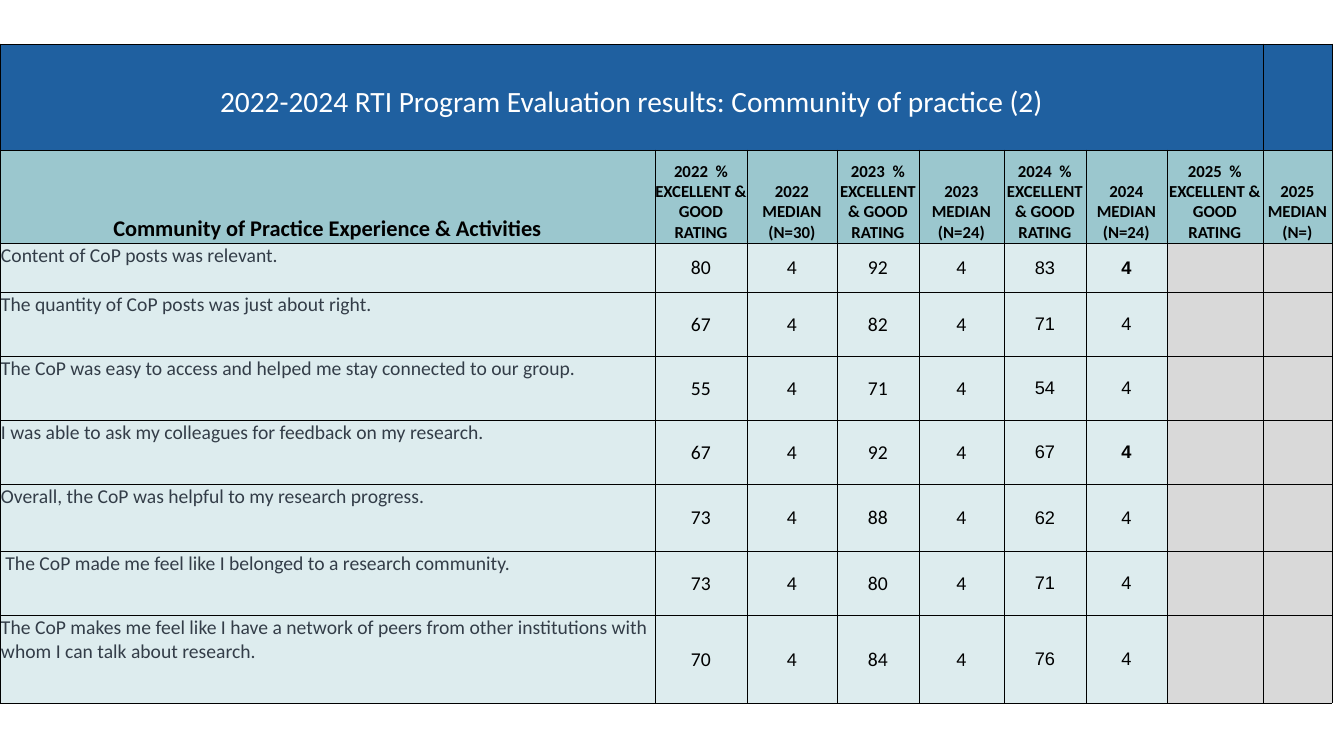
import pptx
import pptx.util
import pptx.dml.color
import pptx.enum.text
import pptx.oxml
import pptx.oxml.ns
from dataclasses import dataclass

PX = 914400 / 100.8
ALIGN = pptx.enum.text.PP_ALIGN
ANCHOR = pptx.enum.text.MSO_ANCHOR


@dataclass(frozen=True)
class Theme:
    blue: str = "1F60A0"
    teal: str = "9BC7CE"
    pale: str = "DDECEE"
    gray: str = "D9D9D9"
    white: str = "FFFFFF"
    black: str = "000000"
    slate: str = "333D48"
    font: str = "Calibri"
    alt: str = "Arial"
    title: int = 21
    lead: int = 16
    head: int = 12
    body: int = 14
    score: int = 13
    rule: float = 0.5


THEME = Theme()
TITLE = "2022-2024 RTI Program Evaluation results: Community of practice (2)"
LEAD = "Community of Practice Experience & Activities"
YEARS = [("2022", "30"), ("2023", "24"), ("2024", "24"), ("2025", "")]
ITEMS = [
    ("Content of CoP posts was relevant.", 80, 92, 83, True),
    ("The quantity of CoP posts was just about right.", 67, 82, 71, False),
    ("The CoP was easy to access and helped me stay connected to our group.", 55, 71, 54, False),
    ("I was able to ask my colleagues for feedback on my research.", 67, 92, 67, True),
    ("Overall, the CoP was helpful to my research progress.", 73, 88, 62, False),
    (" The CoP made me feel like I belonged to a research community.", 73, 80, 71, False),
    ("The CoP makes me feel like I have a network of peers from other institutions "
     "with whom I can talk about research.", 70, 84, 76, False),
]
MEDIAN = 4
COLS = [655, 92, 90, 82, 85, 82, 81, 96, 69]
ROWS = [106, 93, 49, 64, 64, 64, 67, 64, 88]


def px(n):
    return pptx.util.Emu(round(n * PX))


def rgb(code):
    return pptx.dml.color.RGBColor.from_string(code)


def write(cell, text, size=THEME.body, font=THEME.font, color=THEME.black,
          bold=False, align=ALIGN.CENTER, anchor=ANCHOR.MIDDLE, pad=(1, 1, 1, 0)):
    cell.vertical_anchor = anchor
    cell.margin_left, cell.margin_top, cell.margin_right, cell.margin_bottom = map(px, pad)
    para = cell.text_frame.paragraphs[0]
    para.alignment = align
    run = para.add_run()
    run.text = text
    run.font.size = pptx.util.Pt(size)
    run.font.name = font
    run.font.bold = bold
    run.font.color.rgb = rgb(color)


def paint(cell, color):
    props = cell._tc.get_or_add_tcPr()
    for side in ("lnL", "lnR", "lnT", "lnB"):
        props.append(pptx.oxml.parse_xml(
            f'<a:{side} {pptx.oxml.ns.nsdecls("a")} w="{pptx.util.Pt(THEME.rule)}">'
            f'<a:solidFill><a:srgbClr val="{THEME.black}"/></a:solidFill></a:{side}>'))
    cell.fill.solid()
    cell.fill.fore_color.rgb = rgb(color)


def banner(grid):
    for col in range(len(COLS)):
        paint(grid.cell(0, col), THEME.blue)
    cell = grid.cell(0, 0)
    cell.merge(grid.cell(0, len(COLS) - 2))
    write(cell, TITLE, size=THEME.title, color=THEME.white,
          anchor=ANCHOR.TOP, pad=(8, 40, 8, 4))


def heads(grid):
    texts = [LEAD]
    for year, count in YEARS:
        texts += [f"{year}  % EXCELLENT & GOOD RATING", f"{year} MEDIAN (N={count})"]
    for col, text in enumerate(texts):
        cell = grid.cell(1, col)
        paint(cell, THEME.teal)
        write(cell, text, size=THEME.head if col else THEME.lead, bold=True,
              anchor=ANCHOR.BOTTOM, pad=(0, 0, 0, 0))


def scores(grid):
    for row, (label, *rates, strong) in enumerate(ITEMS, 2):
        for col in range(len(COLS)):
            paint(grid.cell(row, col), THEME.pale if col < 7 else THEME.gray)
        write(grid.cell(row, 0), label, color=THEME.slate,
              align=ALIGN.LEFT, anchor=ANCHOR.TOP)
        for year, rate in enumerate(rates):
            last = year == len(rates) - 1
            look = dict(size=THEME.score, font=THEME.alt) if last else {}
            col = 1 + 2 * year
            write(grid.cell(row, col), str(rate), **look)
            write(grid.cell(row, col + 1), str(MEDIAN), bold=last and strong, **look)


def results(slide, left, top, width, height):
    frame = slide.shapes.add_table(len(ROWS), len(COLS),
                                   px(left), px(top), px(width), px(height))
    grid = frame.table
    grid.first_row = grid.horz_banding = False
    for col, size in zip(grid.columns, COLS):
        col.width = px(size * width / sum(COLS))
    for row, size in zip(grid.rows, ROWS):
        row.height = px(size * height / sum(ROWS))
    banner(grid)
    heads(grid)
    scores(grid)


def main():
    deck = pptx.Presentation()
    deck.slide_width, deck.slide_height = px(1344), px(756)
    slide = deck.slides.add_slide(deck.slide_layouts[6])
    results(slide, 0, 44, sum(COLS), sum(ROWS))
    deck.save("out.pptx")


if __name__ == "__main__":
    main()
